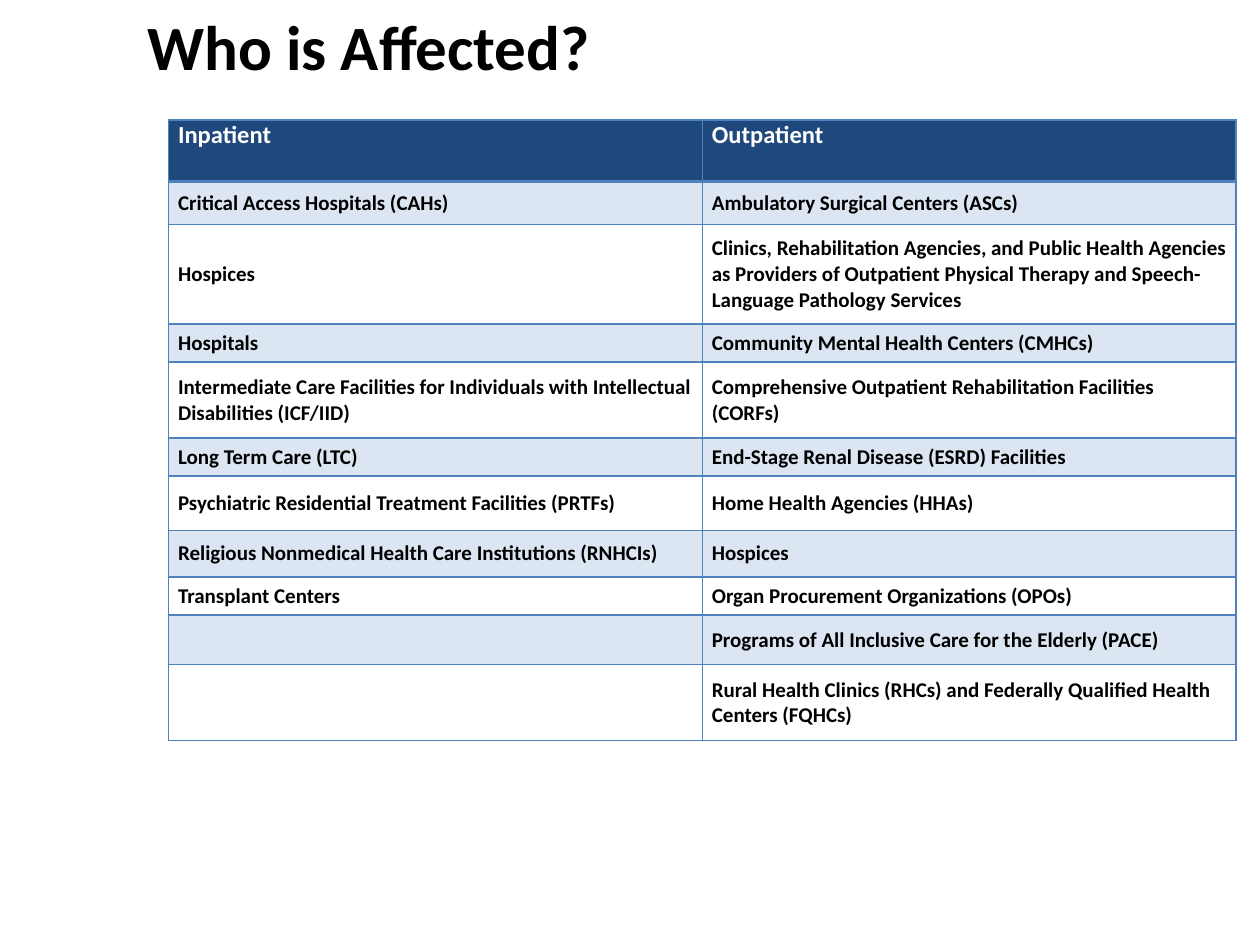
"""Build the slide listing the inpatient and outpatient providers affected."""
from lxml import etree
from pptx import Presentation
from pptx.dml.color import RGBColor
from pptx.enum.text import MSO_ANCHOR
from pptx.oxml.ns import qn
from pptx.util import Cm, Pt

TOP, MIDDLE = MSO_ANCHOR.TOP, MSO_ANCHOR.MIDDLE
BLACK = RGBColor(0, 0, 0)
WHITE = RGBColor(0xFF, 0xFF, 0xFF)
NAVY = RGBColor(0x1F, 0x49, 0x7D)
BLUE = RGBColor(0x4F, 0x81, 0xBD)
PALE = RGBColor(0xDC, 0xE6, 0xF2)

TITLE = "Who is Affected?"
ROWS = [
    (1.24, "Inpatient", "Outpatient"),
    (0.87, "Critical Access Hospitals (CAHs)", "Ambulatory Surgical Centers (ASCs)"),
    (2.0, "Hospices",
     "Clinics, Rehabilitation Agencies, and Public Health Agencies as Providers of "
     "Outpatient Physical Therapy and Speech-Language Pathology Services"),
    (0.77, "Hospitals", "Community Mental Health Centers (CMHCs)"),
    (1.53, "Intermediate Care Facilities for Individuals with Intellectual Disabilities (ICF/IID)",
     "Comprehensive Outpatient Rehabilitation Facilities (CORFs)"),
    (0.77, "Long Term Care (LTC)", "End-Stage Renal Disease (ESRD) Facilities"),
    (1.09, "Psychiatric Residential Treatment Facilities (PRTFs)", "Home Health Agencies (HHAs)"),
    (0.94, "Religious Nonmedical Health Care Institutions (RNHCIs)", "Hospices"),
    (0.77, "Transplant Centers", "Organ Procurement Organizations (OPOs)"),
    (1.0, "", "Programs of All Inclusive Care for the Elderly (PACE)"),
    (1.53, "", "Rural Health Clinics (RHCs) and Federally Qualified Health Centers (FQHCs)"),
]
LEFT, UPPER, WIDTH = 3.4, 2.42, 10.76


def write(frame, text, size=12, color=BLACK):
    frame.word_wrap = True
    para = frame.paragraphs[0]
    para.text = text
    font = para.font
    font.name, font.size, font.bold = "Calibri", Pt(size), True
    font.color.rgb = color


def edge(cell, side, width):
    line = etree.SubElement(cell._tc.get_or_add_tcPr(), qn(f"a:ln{side}"), w=str(Pt(width)))
    fill = etree.SubElement(line, qn("a:solidFill"))
    etree.SubElement(fill, qn("a:srgbClr"), val=str(BLUE))


def style(cell, row):
    cell.margin_left = cell.margin_right = Cm(0.19)
    cell.margin_top = cell.margin_bottom = 0
    cell.vertical_anchor = MIDDLE if row else TOP
    widths = {"L": 1, "R": 1, "T": 2 if row == 1 else 1, "B": 1 if row else 2}
    for side, width in widths.items():
        edge(cell, side, width)
    if row and row % 2 == 0:
        cell.fill.background()
    else:
        cell.fill.solid()
        cell.fill.fore_color.rgb = PALE if row else NAVY


def main():
    deck = Presentation()
    deck.slide_width, deck.slide_height = Cm(25.4), Cm(19.05)
    slide = deck.slides.add_slide(deck.slide_layouts[6])
    box = slide.shapes.add_textbox(Cm(2.72), Cm(0.03), Cm(19.66), Cm(3.18))
    write(box.text_frame, TITLE, size=36)

    high = sum(row[0] for row in ROWS)
    frame = slide.shapes.add_table(len(ROWS), 2, Cm(LEFT), Cm(UPPER), Cm(2 * WIDTH), Cm(high))
    table = frame.table
    for col in table.columns:
        col.width = Cm(WIDTH)
    for r, (height, *texts) in enumerate(ROWS):
        table.rows[r].height = Cm(height)
        for c, text in enumerate(texts):
            cell = table.cell(r, c)
            style(cell, r)
            write(cell.text_frame, text, size=12 if r else 14, color=BLACK if r else WHITE)
    deck.save("out.pptx")


if __name__ == "__main__":
    main()
